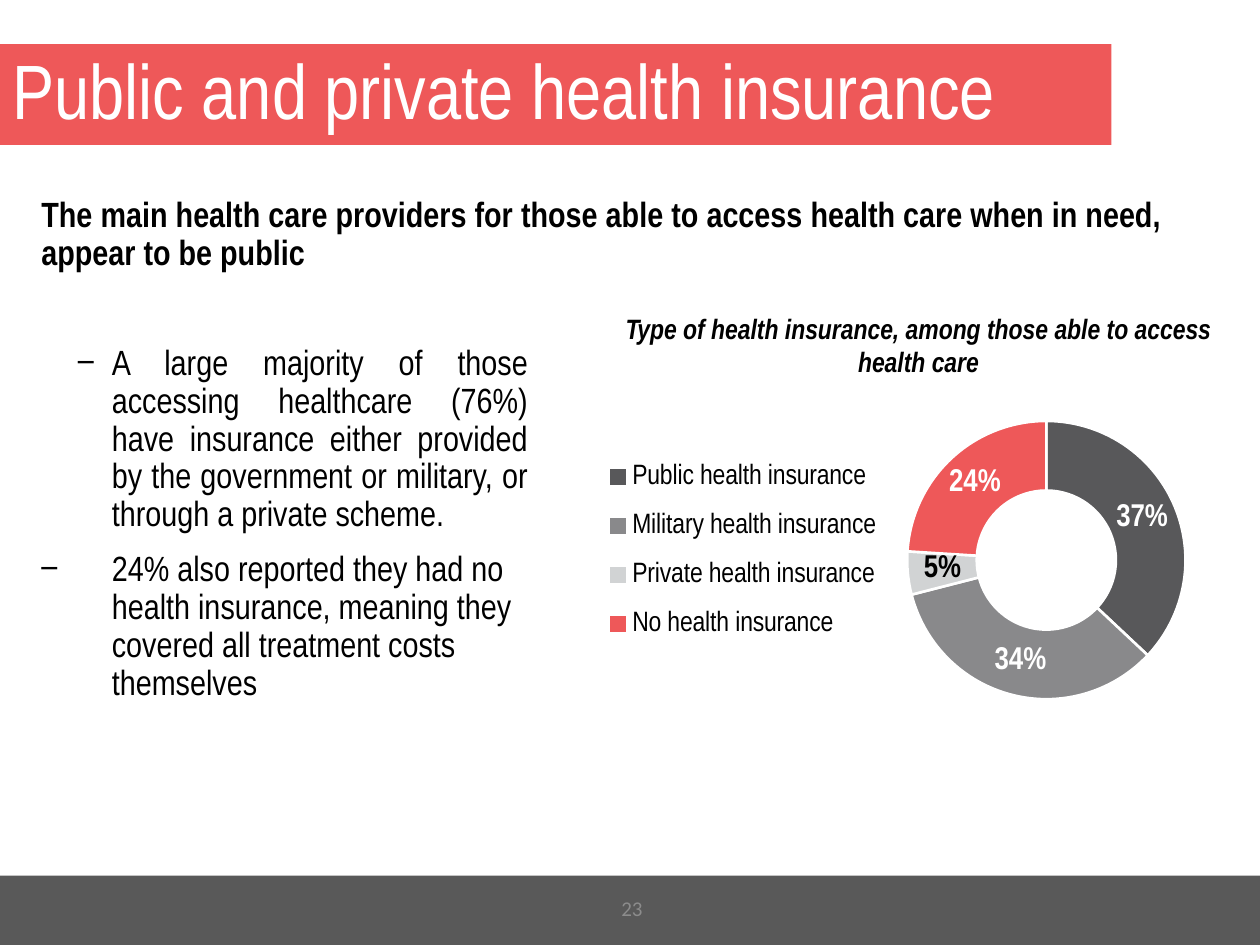
from dataclasses import dataclass

from lxml import etree
from pptx import Presentation
from pptx import util as u
from pptx.chart import data as chart_data
from pptx.dml.color import RGBColor
from pptx.enum import chart as ch, shapes, text
from pptx.oxml import ns


@dataclass(frozen=True)
class Theme:
    font: str = "Arial Narrow"
    number_font: str = "Calibri"
    white: str = "FFFFFF"
    black: str = "000000"
    coral: str = "EE5859"
    charcoal: str = "58585A"
    silver: str = "D1D3D4"
    footer: str = "595959"
    number: str = "8C8C8C"
    title_size: int = 44
    body_size: int = 20
    label_size: int = 18
    caption_size: int = 16
    number_size: int = 12


THEME = Theme()
ALIGN = text.PP_ALIGN
ANCHOR = text.MSO_ANCHOR


def inches(box):
    return [u.Inches(length) for length in box]


def style(font, size, color, bold=False, italic=False, name=THEME.font):
    font.name, font.size = name, u.Pt(size)
    font.bold, font.italic = bold, italic
    font.color.rgb = RGBColor.from_string(color)


def add_band(slide, box, color):
    band = slide.shapes.add_shape(shapes.MSO_SHAPE.RECTANGLE, *inches(box))
    band.shadow.inherit = False
    band.fill.solid()
    band.fill.fore_color.rgb = RGBColor.from_string(color)
    band.line.fill.background()
    return band


def add_text_frame(slide, box, anchor=ANCHOR.TOP):
    frame = slide.shapes.add_textbox(*inches(box)).text_frame
    frame.word_wrap = True
    frame.vertical_anchor = anchor
    return frame


def write(paragraph, words, align, spacing=1.0, **look):
    paragraph.alignment = align
    paragraph.line_spacing = spacing
    run = paragraph.add_run()
    run.text = words
    style(run.font, **look)


def add_title(slide, box, words):
    frame = add_band(slide, box, THEME.coral).text_frame
    frame.word_wrap = True
    frame.vertical_anchor = ANCHOR.MIDDLE
    write(frame.paragraphs[0], words, ALIGN.LEFT, 0.9,
          size=THEME.title_size, color=THEME.white)


def add_headline(slide, box, words):
    frame = add_text_frame(slide, box)
    write(frame.paragraphs[0], words, ALIGN.JUSTIFY, 0.9,
          size=THEME.body_size, color=THEME.black, bold=True)


def add_findings(slide, box, findings):
    frame = add_text_frame(slide, box)
    for index, (words, align, hanging) in enumerate(findings):
        paragraph = frame.add_paragraph() if index else frame.paragraphs[0]
        if index:
            paragraph.space_before = u.Pt(10)
        properties = paragraph._p.get_or_add_pPr()
        properties.set("marL", str(u.Inches(0.56)))
        properties.set("indent", str(-u.Inches(hanging)))
        etree.SubElement(properties, ns.qn("a:buFont"), typeface=THEME.font)
        etree.SubElement(properties, ns.qn("a:buChar"), char="–")
        write(paragraph, words, align, 0.9, size=THEME.body_size, color=THEME.black)


def place(part, box, inner=False):
    layout = part.find(ns.qn("c:layout"))
    if layout is None:
        layout = etree.Element(ns.qn("c:layout"))
        position = part.find(ns.qn("c:legendPos"))
        if position is None:
            part.insert(0, layout)
        else:
            position.addnext(layout)
    manual = etree.SubElement(layout, ns.qn("c:manualLayout"))
    settings = [("layoutTarget", "inner")] if inner else []
    settings += [("xMode", "edge"), ("yMode", "edge"), *zip("xywh", box)]
    for tag, value in settings:
        etree.SubElement(manual, ns.qn(f"c:{tag}"), val=str(value))


def add_insurance_chart(slide, box, shares):
    data = chart_data.CategoryChartData(number_format="0%")
    data.categories = [name for name, *_ in shares]
    data.add_series("Series 1", [share for _, share, *_ in shares])
    chart = slide.shapes.add_chart(ch.XL_CHART_TYPE.DOUGHNUT, *inches(box), data).chart
    chart.has_title = False
    style(chart.font, 10, THEME.black)

    chart.has_legend = True
    legend = chart.legend
    legend.position = ch.XL_LEGEND_POSITION.LEFT
    legend.include_in_layout = False
    style(legend.font, THEME.caption_size, THEME.black)
    place(legend._element, (0.04, 0.2, 0.44, 0.46))

    plot = chart.plots[0]
    plot.vary_by_categories = True
    plot._element.find(ns.qn("c:holeSize")).set("val", "40")
    place(plot._element.getparent(), (0.52, 0.11, 0.44, 0.68), inner=True)

    series = plot.series[0]
    labels = series.data_labels
    labels.show_value = True
    labels.show_percentage = False
    labels.number_format = "###0%"
    labels.number_format_is_linked = False
    style(labels.font, THEME.label_size, THEME.white, bold=True)

    for index, (_, _, color, opacity, label_color) in enumerate(shares):
        point = series.points[index]
        point.format.fill.solid()
        point.format.fill.fore_color.rgb = RGBColor.from_string(color)
        point.format.line.color.rgb = RGBColor.from_string(THEME.white)
        point.format.line.width = u.Pt(1.5)
        if opacity < 100:
            tint = point.format.fill._xPr.find(".//" + ns.qn("a:srgbClr"))
            etree.SubElement(tint, ns.qn("a:alpha"), val=str(opacity * 1000))
        if label_color != THEME.white:
            style(point.data_label.font, THEME.label_size, label_color, bold=True)


def add_caption(slide, box, words):
    frame = add_text_frame(slide, box)
    write(frame.paragraphs[0], words, ALIGN.CENTER, size=THEME.caption_size,
          color=THEME.black, bold=True, italic=True)


def add_page_number(slide, box, number):
    frame = add_text_frame(slide, box, ANCHOR.MIDDLE)
    write(frame.paragraphs[0], number, ALIGN.CENTER, size=THEME.number_size,
          color=THEME.number, name=THEME.number_font)


def main():
    deck = Presentation()
    deck.slide_width, deck.slide_height = u.Inches(10), u.Inches(7.5)
    slide = deck.slides.add_slide(deck.slide_layouts[6])
    add_band(slide, (0, 6.95, 10, 0.55), THEME.footer)
    add_title(slide, (0, 0.35, 8.82, 0.8), "Public and private health insurance")
    add_headline(slide, (0.23, 1.52, 9.09, 0.86),
                 "The main health care providers for those able to access health care "
                 "when in need, appear to be public")
    add_insurance_chart(slide, (4.59, 2.74, 5.02, 3.79), [
        ("Public health insurance", 0.37, THEME.charcoal, 100, THEME.white),
        ("Military health insurance", 0.34, THEME.charcoal, 70, THEME.white),
        ("Private health insurance", 0.05, THEME.silver, 100, THEME.black),
        ("No health insurance", 0.24, THEME.coral, 100, THEME.white),
    ])
    add_findings(slide, (0.23, 2.69, 4.06, 3.42), [
        ("A large majority of those accessing healthcare (76%) have insurance either "
         "provided by the government or military, or through a private scheme.",
         ALIGN.JUSTIFY, 0.27),
        ("24% also reported they had no health insurance, meaning they covered all "
         "treatment costs themselves", ALIGN.LEFT, 0.56),
    ])
    add_caption(slide, (4.79, 2.42, 5, 0.64),
                "Type of health insurance, among those able to access health care")
    add_page_number(slide, (3.89, 7.01, 2.25, 0.4), "23")
    deck.save("out.pptx")


if __name__ == "__main__":
    main()
